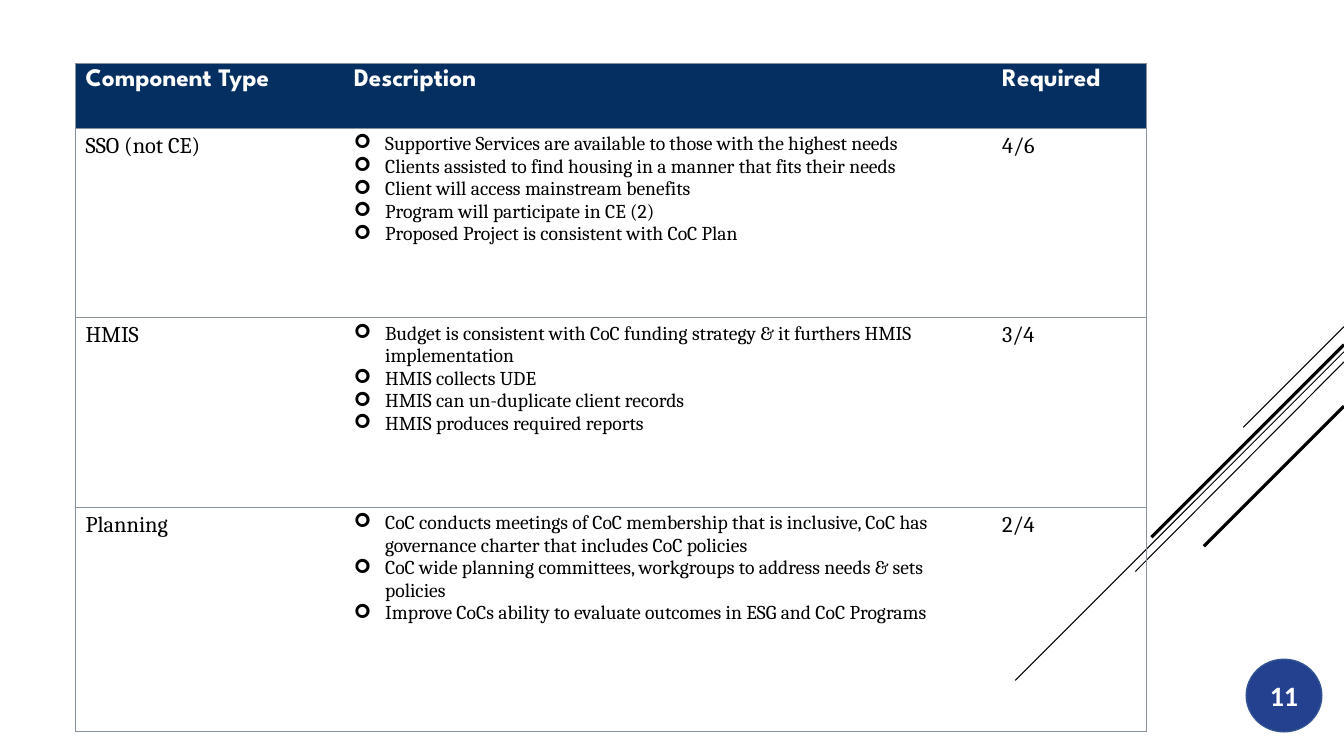
from lxml import etree
from pptx import Presentation
from pptx.dml.color import RGBColor
from pptx.enum.shapes import MSO_CONNECTOR, MSO_SHAPE
from pptx.enum.text import MSO_ANCHOR, PP_ALIGN
from pptx.oxml.ns import qn
from pptx.util import Inches, Pt

STRAIGHT = MSO_CONNECTOR.STRAIGHT
OVAL = MSO_SHAPE.OVAL
MIDDLE = MSO_ANCHOR.MIDDLE
CENTER = PP_ALIGN.CENTER

SLIDE_WIDTH = 13.33
NAVY = "052F61"
BLUE = "244190"
BLUE_EDGE = "31538F"
GRAY = "89919C"
BLACK = "000000"
WHITE = "FFFFFF"

DIAGONALS = [
    (3.24, 12.33, 4.24, 0.75),
    (3.49, 10.07, 6.75, 0.75),
    (3.59, 11.26, 5.67, 0.75),
    (3.42, 11.42, 5.33, 2.25),
    (4.03, 11.94, 5.42, 2.25),
]
COLUMN_WIDTHS = [2.66, 6.43, 1.53]
ROW_HEIGHTS = [0.64, 1.88, 1.88, 2.23]
HEADINGS = ["Component Type", "Description", "Required"]
COMPONENTS = [
    ("SSO (not CE)", [
        "Supportive Services are available to those with the highest needs",
        "Clients assisted to find housing in a manner that fits their needs",
        "Client will access mainstream benefits",
        "Program will participate in CE (2)",
        "Proposed Project is consistent with CoC Plan",
    ], "4/6"),
    ("HMIS", [
        "Budget is consistent with CoC funding strategy & it furthers HMIS implementation",
        "HMIS collects UDE",
        "HMIS can un-duplicate client records",
        "HMIS produces required reports",
    ], "3/4"),
    ("Planning", [
        "CoC conducts meetings of CoC membership that is inclusive, CoC has governance charter that includes CoC policies",
        "CoC wide planning committees, workgroups to address needs & sets policies",
        "Improve CoCs ability to evaluate outcomes in ESG and CoC Programs",
    ], "2/4"),
]


def color(value):
    return RGBColor.from_string(value)


def add_span(para, text, font, size, ink, bold=False):
    span = para.add_run()
    span.text = text
    span.font.name = font
    span.font.size = Pt(size)
    span.font.bold = bold
    span.font.color.rgb = color(ink)


def add_diagonal(page, top, left, bottom, weight):
    line = page.shapes.add_connector(
        STRAIGHT, Inches(SLIDE_WIDTH), Inches(top), Inches(left), Inches(bottom))
    line.line.color.rgb = color(BLACK)
    line.line.width = Pt(weight)
    etree.SubElement(line._element.spPr, qn("a:effectLst"))


def add_page_badge(page, number):
    badge = page.shapes.add_shape(
        OVAL, Inches(12.36), Inches(6.54), Inches(0.75), Inches(0.72))
    badge.shadow.inherit = False
    badge.fill.solid()
    badge.fill.fore_color.rgb = color(BLUE)
    badge.line.color.rgb = color(BLUE_EDGE)
    badge.line.width = Pt(1)
    badge.text_frame.vertical_anchor = MIDDLE
    para = badge.text_frame.paragraphs[0]
    para.alignment = CENTER
    add_span(para, number, "Calibri", 20, WHITE, True)


def set_borders(cell, visible_sides):
    properties = cell._tc.get_or_add_tcPr()
    for side in "LRTB":
        edge = etree.SubElement(properties, qn(f"a:ln{side}"), w=str(Pt(0.75)))
        if side in visible_sides:
            fill = etree.SubElement(edge, qn("a:solidFill"))
            etree.SubElement(fill, qn("a:srgbClr"), val=GRAY)
        else:
            etree.SubElement(edge, qn("a:noFill"))


def add_bullet(para):
    properties = para._p.get_or_add_pPr()
    properties.set("marL", str(Inches(0.31)))
    properties.set("indent", str(-Inches(0.31)))
    etree.SubElement(properties, qn("a:buFont"), typeface="Wingdings")
    etree.SubElement(properties, qn("a:buChar"), char="➢")


def fill_description(cell, items):
    frame = cell.text_frame
    for index, item in enumerate(items):
        para = frame.add_paragraph() if index else frame.paragraphs[0]
        add_bullet(para)
        add_span(para, item, "Cambria", 14, BLACK)


def add_component_table(page):
    frame = page.shapes.add_table(
        len(ROW_HEIGHTS), len(COLUMN_WIDTHS), Inches(0.75), Inches(0.63),
        Inches(sum(COLUMN_WIDTHS)), Inches(sum(ROW_HEIGHTS)))
    table = frame.table
    table.first_row = False
    table.horz_banding = False
    for column, width in zip(table.columns, COLUMN_WIDTHS):
        column.width = Inches(width)
    for row, height in zip(table.rows, ROW_HEIGHTS):
        row.height = Inches(height)
        for cell, outer_side in zip(row.cells, ("L", "", "R")):
            set_borders(cell, "TB" + outer_side)
            cell.fill.background()
    for cell, heading in zip(table.rows[0].cells, HEADINGS):
        cell.fill.solid()
        cell.fill.fore_color.rgb = color(NAVY)
        add_span(cell.text_frame.paragraphs[0], heading, "League Spartan", 18, WHITE, True)
    for index, (component, items, required) in enumerate(COMPONENTS, 1):
        for column, text in ((0, component), (2, required)):
            para = table.cell(index, column).text_frame.paragraphs[0]
            add_span(para, text, "Cambria", 16, BLACK)
        fill_description(table.cell(index, 1), items)


def main():
    deck = Presentation()
    deck.slide_width = Inches(SLIDE_WIDTH)
    deck.slide_height = Inches(7.5)
    page = deck.slides.add_slide(deck.slide_layouts[6])
    for diagonal in DIAGONALS:
        add_diagonal(page, *diagonal)
    add_page_badge(page, "11")
    add_component_table(page)
    deck.save("out.pptx")


if __name__ == "__main__":
    main()
